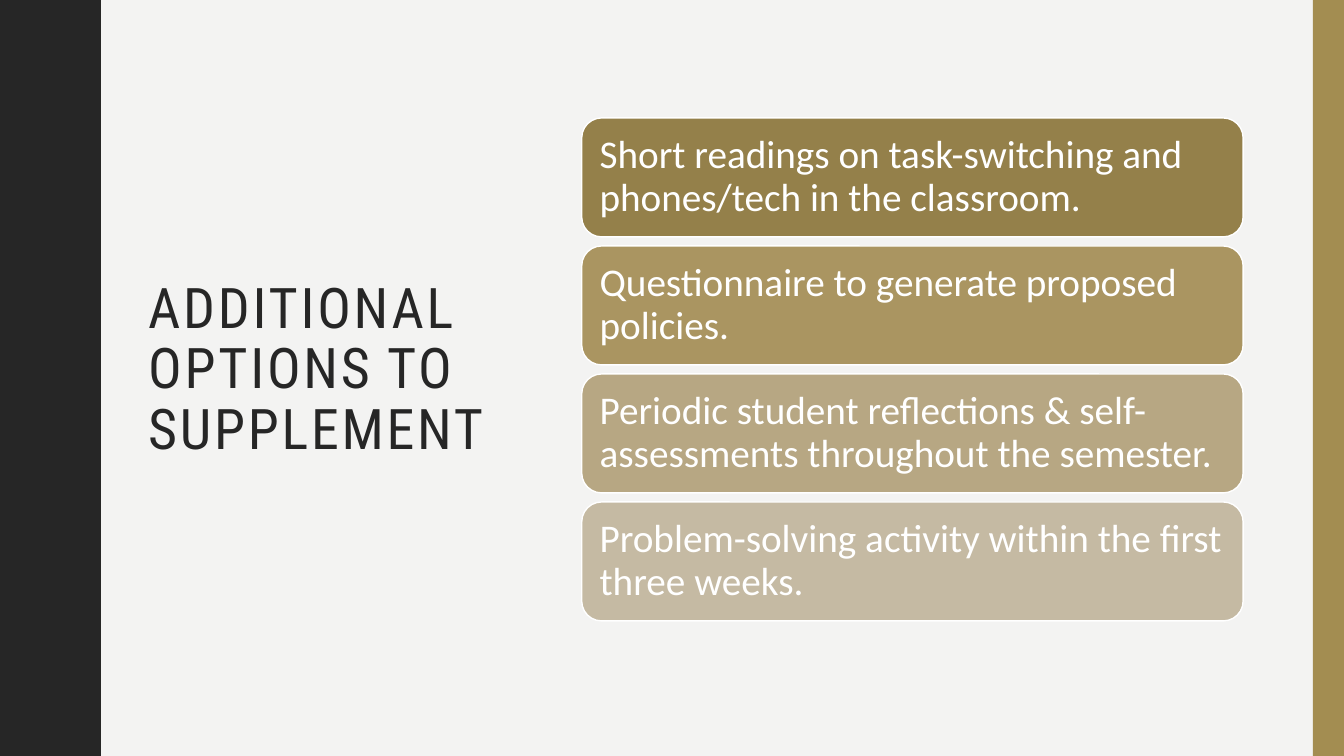
"""Build the slide listing additional options to supplement a course."""
from pptx import Presentation
from pptx.dml.color import RGBColor
from pptx.enum.shapes import MSO_SHAPE
from pptx.enum.text import MSO_ANCHOR, MSO_AUTO_SIZE, PP_ALIGN
from pptx.util import Inches, Pt

RECTANGLE, ROUNDED = MSO_SHAPE.RECTANGLE, MSO_SHAPE.ROUNDED_RECTANGLE
MIDDLE, LEFT, NO_FIT = MSO_ANCHOR.MIDDLE, PP_ALIGN.LEFT, MSO_AUTO_SIZE.NONE

TITLE = "ADDITIONAL OPTIONS TO SUPPLEMENT"
OPTIONS = [
    ("Short readings on task-switching and phones/tech in the classroom.", "option1"),
    ("Questionnaire to generate proposed policies.", "option2"),
    ("Periodic student reflections & self-assessments throughout the semester.", "option3"),
    ("Problem-solving activity within the first three weeks.", "option4"),
]
COLORS = {
    "background": "F3F3F2", "dark": "262626", "gold": "A38D51", "white": "FFFFFF",
    "option1": "94804A", "option2": "AA9561", "option3": "B7A783", "option4": "C5BAA3",
}
WIDTH, HEIGHT = 13.33, 7.5
STRIPE_WIDTH = 0.31
CARD_LEFT, CARD_TOP, CARD_WIDTH, CARD_HEIGHT, CARD_PITCH = 5.77, 1.17, 6.56, 1.18, 1.27
HALF_WAVES = 10
HALF_WAVE = [
    (0.78, 0), (0.78, 0.07), (0.79, 0.14), (0.8, 0.2), (0.81, 0.25),
    (0.83, 0.29), (0.85, 0.33), (0.87, 0.38), (0.89, 0.42), (0.91, 0.46),
    (0.93, 0.5), (0.95, 0.55), (0.96, 0.61), (0.97, 0.68), (0.97, 0.75),
]


def color(name):
    """Return the named colour."""
    return RGBColor.from_string(COLORS[name])


def paint(shape, fill, line=None):
    """Fill and outline a shape without a shadow."""
    shape.shadow.inherit = False
    shape.fill.solid()
    shape.fill.fore_color.rgb = color(fill)
    if line:
        shape.line.color.rgb = color(line)
        shape.line.width = Pt(1)
    else:
        shape.line.fill.background()


def write(shape, text, *, font, size, ink, margin, spacing=0):
    """Set left-aligned, vertically centred text."""
    frame = shape.text_frame
    frame.word_wrap, frame.auto_size = True, NO_FIT
    frame.vertical_anchor = MIDDLE
    frame.margin_left = frame.margin_right = Inches(margin)
    frame.margin_top = frame.margin_bottom = Inches(margin)
    para = frame.paragraphs[0]
    para.alignment, para.line_spacing = LEFT, 0.9
    span = para.add_run()
    span.text = text
    span.font.name, span.font.size = font, Pt(size)
    span.font.color.rgb = color(ink)
    if spacing:
        span.font._element.set("spc", str(spacing * 100))


def wave_points():
    """Return the wavy edge, mirroring every other half wave."""
    step = HALF_WAVE[-1][1]
    points = []
    for index in range(HALF_WAVES):
        if index % 2:
            half = [(x, step - y) for x, y in reversed(HALF_WAVE)]
        else:
            half = HALF_WAVE
        points += [(x, y + index * step) for x, y in half[bool(index):]]
    return points


def add_wave(page):
    """Draw the dark band with a wavy right edge."""
    builder = page.shapes.build_freeform(0, 0, scale=Inches(1))
    builder.add_line_segments(wave_points() + [(0, HEIGHT)], close=True)
    paint(builder.convert_to_shape(), "dark")


def add_box(page, kind, left, top, width, height):
    """Add a preset shape placed in inches."""
    return page.shapes.add_shape(kind, *map(Inches, (left, top, width, height)))


def main():
    """Assemble and save the deck."""
    deck = Presentation()
    deck.slide_width, deck.slide_height = Inches(WIDTH), Inches(HEIGHT)
    page = deck.slides.add_slide(deck.slide_layouts[5])
    page.background.fill.solid()
    page.background.fill.fore_color.rgb = color("background")

    add_wave(page)
    stripe = add_box(page, RECTANGLE, WIDTH - STRIPE_WIDTH, 0, STRIPE_WIDTH, HEIGHT)
    paint(stripe, "gold")

    title = page.shapes.title
    title.left, title.top, title.width, title.height = map(Inches, (1.37, 0.71, 3.7, 5.93))
    write(title, TITLE, font="Roboto Condensed", size=40, ink="dark", margin=0.1, spacing=2)

    for row, (text, fill) in enumerate(OPTIONS):
        top = CARD_TOP + row * CARD_PITCH
        card = add_box(page, ROUNDED, CARD_LEFT, top, CARD_WIDTH, CARD_HEIGHT)
        paint(card, fill, line="white")
        write(card, text, font="Calibri", size=28, ink="white", margin=0.12)

    deck.save("out.pptx")


if __name__ == "__main__":
    main()
